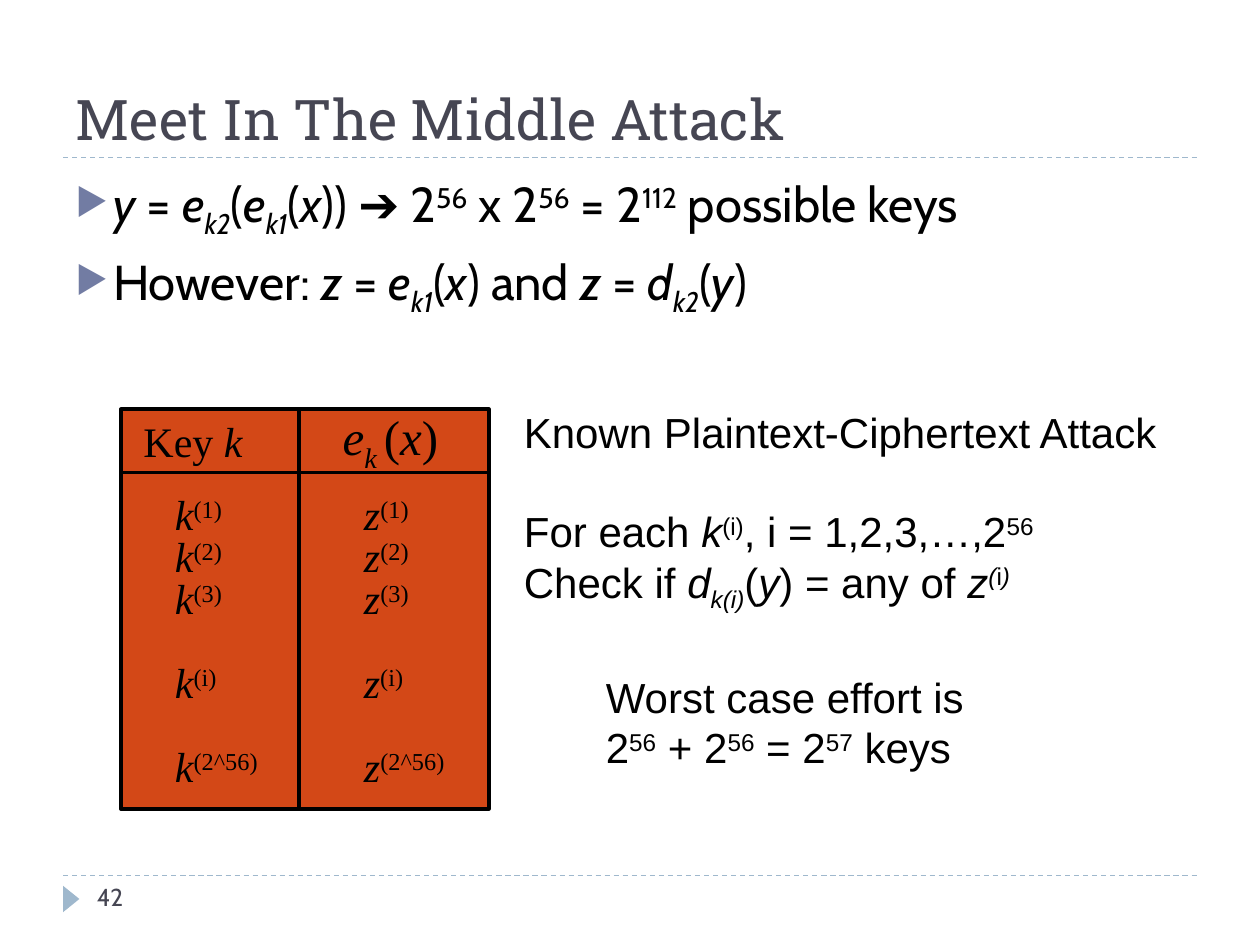
from lxml import etree
from pptx import Presentation
from pptx.dml.color import RGBColor
from pptx.enum.dml import MSO_LINE
from pptx.enum.shapes import MSO_CONNECTOR, MSO_SHAPE
from pptx.enum.text import MSO_ANCHOR, MSO_AUTO_SIZE
from pptx.oxml.ns import qn
from pptx.util import Inches, Pt

BLACK = RGBColor(0x00, 0x00, 0x00)
SLATE = RGBColor(0x46, 0x46, 0x53)
MIST = RGBColor(0x9F, 0xB8, 0xCD)
RUST = RGBColor(0xD3, 0x48, 0x17)
BULLET = "727CA3"
STRAIGHT = MSO_CONNECTOR.STRAIGHT
RECT = MSO_SHAPE.RECTANGLE
TRIANGLE = MSO_SHAPE.ISOSCELES_TRIANGLE
DASH = MSO_LINE.DASH
TOP = MSO_ANCHOR.TOP
BOTTOM = MSO_ANCHOR.BOTTOM
GROW = MSO_AUTO_SIZE.SHAPE_TO_FIT_TEXT
SHIFTS = {"<": 30000, "[": -25000, ">": 0, "]": 0}


def add_runs(para, markup):
    """Read *italic*, <superscript> and [subscript]."""
    italic, shift, word = False, 0, ""
    for char in markup + "*":
        if char != "*" and char not in SHIFTS:
            word += char
            continue
        if word:
            run = para.add_run()
            run.text = word
            run.font.italic = italic
            if shift:
                run.font._element.set("baseline", str(shift))
            word = ""
        if char == "*":
            italic = not italic
        else:
            shift = SHIFTS[char]


def add_text(parent, box, lines, face, size, color=BLACK, wrap=False, anchor=TOP):
    frame = parent.add_textbox(*map(Inches, box)).text_frame
    frame.word_wrap = wrap
    frame.vertical_anchor = anchor
    if not wrap:
        frame.auto_size = GROW
    for num, line in enumerate(lines):
        para = frame.add_paragraph() if num else frame.paragraphs[0]
        para.font.name = face
        para.font.size = Pt(size)
        para.font.color.rgb = color
        add_runs(para, line)
    return frame.paragraphs


def add_line(parent, start, end, color, width, dash=None):
    line = parent.add_connector(STRAIGHT, *map(Inches, start + end))
    line.line.color.rgb = color
    line.line.width = Pt(width)
    if dash:
        line.line.dash_style = dash
    etree.SubElement(line._element.spPr, qn("a:effectLst"))


def add_bullet(para):
    props = para._p.get_or_add_pPr()
    props.set("marL", str(Inches(0.3)))
    props.set("indent", str(Inches(-0.3)))
    color = etree.SubElement(props, qn("a:buClr"))
    etree.SubElement(color, qn("a:srgbClr"), val=BULLET)
    etree.SubElement(props, qn("a:buSzPct"), val="76000")
    etree.SubElement(props, qn("a:buChar"), char="▶")


def add_title(shapes, box):
    left, top, width, height = box
    base = top + height
    add_line(shapes, (left, base), (left + width, base), MIST, 0.75, DASH)
    add_text(shapes, box, ["Meet In The Middle Attack"], "Roboto Slab", 32,
             SLATE, True, BOTTOM)


def add_footer(shapes, box):
    left, top, width, height = box
    add_line(shapes, (left, top), (left + width, top), MIST, 0.75, DASH)
    mark = shapes.add_shape(TRIANGLE, Inches(left - 0.04), Inches(top + 0.12),
                            Inches(0.21), Inches(0.13))
    mark.rotation = 90
    mark.shadow.inherit = False
    mark.fill.solid()
    mark.fill.fore_color.rgb = MIST
    mark.line.fill.background()
    add_text(shapes, (left + 0.17, top, 2.17, height), ["42"], "Cabin", 14,
             SLATE, True)


def add_body(shapes, box):
    lines = [
        "*y* = *e[k2]*(*e[k1]*(*x*)) ➔ 2<56> x 2<56> = 2<112> possible keys",
        "However: *z* = *e[k1]*(*x*) and *z* = *d[k2]*(*y*)",
    ]
    for para in add_text(shapes, box, lines, "Cabin", 28, wrap=True):
        para.space_before = Pt(6)
        add_bullet(para)


def add_lookup(shapes, box):
    left, top, width, height = box
    group = shapes.add_group_shape().shapes
    panel = group.add_shape(RECT, *map(Inches, box))
    panel.shadow.inherit = False
    panel.fill.solid()
    panel.fill.fore_color.rgb = RUST
    panel.line.color.rgb = BLACK
    panel.line.width = Pt(2.25)
    split, head = left + 1.41, top + 0.5
    add_line(group, (split, top), (split, top + height), BLACK, 2.25)
    add_line(group, (left, head), (left + width, head), BLACK, 2.25)

    face = "Times New Roman"
    add_text(group, (left + 0.08, top, 0.99, 0.5), ["Key *k*"], face, 24)
    add_text(group, (left + 1.66, top - 0.07, 0.99, 0.57),
             ["*e[k ]*(*x*)"], face, 28)
    rows = [(0, "1", 0.61), (1, "2", 0.61), (2, "3", 0.61),
            (4, "i", 0.56), (6, "2^56", 0.94)]
    for step, index, wide in rows:
        y = head + 0.08 + step / 3
        for name, x, trim in (("k", 0.33, 0), ("z", 1.83, 0.02)):
            add_text(group, (left + x, y, wide - trim, 0.5),
                     [f"*{name}*<({index})>"], face, 24)


def add_attack(shapes, box):
    lines = [
        "Known Plaintext-Ciphertext Attack",
        "For each *k*<(i)>, i = 1,2,3,…,2<56>",
        "Check if *d[k(i)]*(*y*) = any of *z<(*i*)>*",
    ]
    paras = add_text(shapes, box, lines, "Arial", 24)
    paras[1].space_before = Pt(27.6)


def add_effort(shapes, box):
    lines = ["Worst case effort is", "2<56> + 2<56> = 2<57> keys"]
    add_text(shapes, box, lines, "Arial", 24)


def main():
    deck = Presentation()
    deck.slide_width = Inches(10)
    deck.slide_height = Inches(7.5)
    shapes = deck.slides.add_slide(deck.slide_layouts[6]).shapes
    add_footer(shapes, (0.5, 6.95, 9, 0.4))
    add_title(shapes, (0.5, 0.17, 9, 1.08))
    add_body(shapes, (0.5, 1.33, 9, 5.4))
    add_lookup(shapes, (0.96, 3.25, 2.92, 3.17))
    add_attack(shapes, (4.06, 3.18, 5.27, 1.72))
    add_effort(shapes, (4.71, 5.28, 3.15, 0.9))
    deck.save("out.pptx")


if __name__ == "__main__":
    main()
